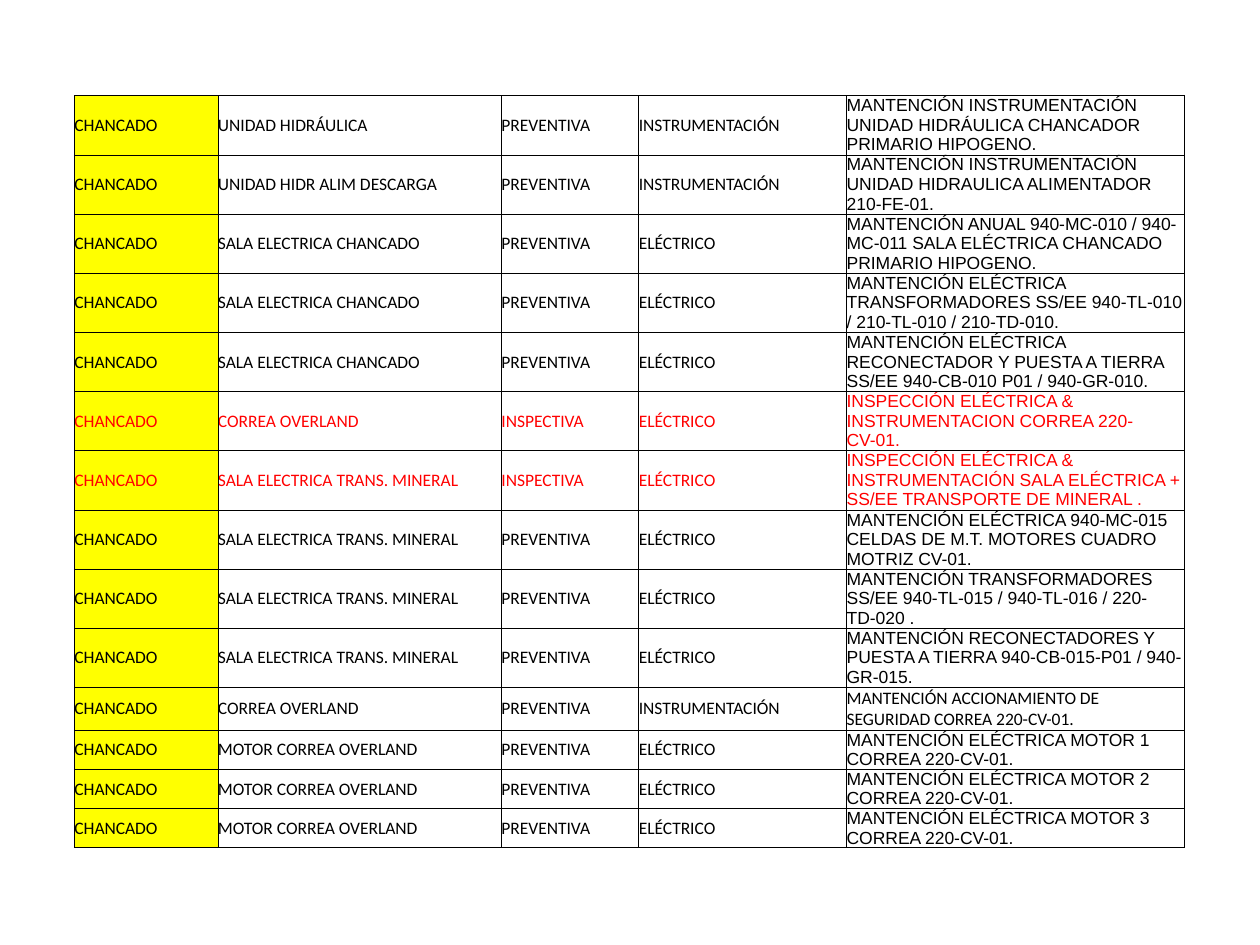
from lxml import etree
from pptx import Presentation
from pptx import util as u
from pptx.dml.color import RGBColor
from pptx.enum import text
from pptx.oxml.ns import qn

BLACK = RGBColor(0, 0, 0)
RED = RGBColor(255, 0, 0)
YELLOW = RGBColor(255, 255, 0)
WHITE = RGBColor(255, 255, 255)

AREA = "CHANCADO"
CRUSHER_ROOM = "SALA ELECTRICA CHANCADO"
TRANSPORT_ROOM = "SALA ELECTRICA TRANS. MINERAL"
BELT = "CORREA OVERLAND"
BELT_MOTOR = "MOTOR CORREA OVERLAND"
PREVENTIVE, INSPECTIVE = "PREVENTIVA", "INSPECTIVA"
ELECTRIC, INSTRUMENTS = "ELÉCTRICO", "INSTRUMENTACIÓN"

TASKS = [
    ("UNIDAD HIDRÁULICA", PREVENTIVE, INSTRUMENTS,
     "MANTENCIÓN INSTRUMENTACIÓN UNIDAD HIDRÁULICA CHANCADOR PRIMARIO HIPOGENO."),
    ("UNIDAD HIDR ALIM DESCARGA", PREVENTIVE, INSTRUMENTS,
     "MANTENCIÓN INSTRUMENTACIÓN UNIDAD HIDRAULICA ALIMENTADOR 210-FE-01."),
    (CRUSHER_ROOM, PREVENTIVE, ELECTRIC,
     "MANTENCIÓN ANUAL 940-MC-010 / 940-MC-011 SALA ELÉCTRICA CHANCADO PRIMARIO HIPOGENO."),
    (CRUSHER_ROOM, PREVENTIVE, ELECTRIC,
     "MANTENCIÓN ELÉCTRICA TRANSFORMADORES SS/EE 940-TL-010 / 210-TL-010 / 210-TD-010."),
    (CRUSHER_ROOM, PREVENTIVE, ELECTRIC,
     "MANTENCIÓN ELÉCTRICA RECONECTADOR Y PUESTA A TIERRA SS/EE 940-CB-010 P01 / 940-GR-010."),
    (BELT, INSPECTIVE, ELECTRIC,
     "INSPECCIÓN ELÉCTRICA & INSTRUMENTACION CORREA 220-CV-01."),
    (TRANSPORT_ROOM, INSPECTIVE, ELECTRIC,
     "INSPECCIÓN ELÉCTRICA & INSTRUMENTACIÓN SALA ELÉCTRICA + SS/EE TRANSPORTE DE MINERAL ."),
    (TRANSPORT_ROOM, PREVENTIVE, ELECTRIC,
     "MANTENCIÓN ELÉCTRICA 940-MC-015 CELDAS DE M.T. MOTORES CUADRO MOTRIZ CV-01."),
    (TRANSPORT_ROOM, PREVENTIVE, ELECTRIC,
     "MANTENCIÓN TRANSFORMADORES SS/EE 940-TL-015 / 940-TL-016 / 220-TD-020 ."),
    (TRANSPORT_ROOM, PREVENTIVE, ELECTRIC,
     "MANTENCIÓN RECONECTADORES Y PUESTA A TIERRA 940-CB-015-P01 / 940-GR-015."),
    (BELT, PREVENTIVE, INSTRUMENTS,
     "MANTENCIÓN ACCIONAMIENTO DE SEGURIDAD CORREA 220-CV-01."),
] + [
    (BELT_MOTOR, PREVENTIVE, ELECTRIC,
     f"MANTENCIÓN ELÉCTRICA MOTOR {motor} CORREA 220-CV-01.")
    for motor in (1, 2, 3)
]
SAFETY_ROW = 10  # its description is in Calibri, aligned to the top
WHITE_ROW = 5
COLUMN_WIDTHS = [1.14, 2.25, 1.09, 1.65, 2.68]
ROW_HEIGHTS = [0.47] * 10 + [0.34] + [0.31] * 3


def add_borders(cell):
    properties = cell._tc.get_or_add_tcPr()
    for index, side in enumerate(("a:lnL", "a:lnR", "a:lnT", "a:lnB")):
        line = etree.Element(qn(side), w=str(u.Pt(0.5)))
        fill = etree.SubElement(line, qn("a:solidFill"))
        etree.SubElement(fill, qn("a:srgbClr"), val=str(BLACK))
        properties.insert(index, line)


presentation = Presentation()
presentation.slide_width = u.Inches(10)
presentation.slide_height = u.Inches(7.5)
slide = presentation.slides.add_slide(presentation.slide_layouts[6])

table = slide.shapes.add_table(
    len(TASKS), len(COLUMN_WIDTHS), u.Inches(0.59), u.Inches(0.76),
    u.Inches(sum(COLUMN_WIDTHS)), u.Inches(sum(ROW_HEIGHTS))).table
table.first_row = table.horz_banding = False
for column, width in zip(table.columns, COLUMN_WIDTHS):
    column.width = u.Inches(width)
for row, height in zip(table.rows, ROW_HEIGHTS):
    row.height = u.Inches(height)

for row_index, task in enumerate(TASKS):
    for column_index, wording in enumerate((AREA, *task)):
        is_description = column_index == len(task)
        is_safety = is_description and row_index == SAFETY_ROW
        cell = table.cell(row_index, column_index)
        cell.text = wording
        cell.margin_left = cell.margin_right = cell.margin_top = cell.margin_bottom = 0
        cell.vertical_anchor = text.MSO_ANCHOR.TOP if is_safety else text.MSO_ANCHOR.MIDDLE

        font = cell.text_frame.paragraphs[0].runs[0].font
        font.size = u.Pt(10)
        font.name = "Arial" if is_description and not is_safety else "Calibri"
        font.color.rgb = RED if INSPECTIVE in task else BLACK

        if column_index == 0 or row_index == WHITE_ROW:
            cell.fill.solid()
            cell.fill.fore_color.rgb = YELLOW if column_index == 0 else WHITE
        else:
            cell.fill.background()
        add_borders(cell)

presentation.save("out.pptx")
